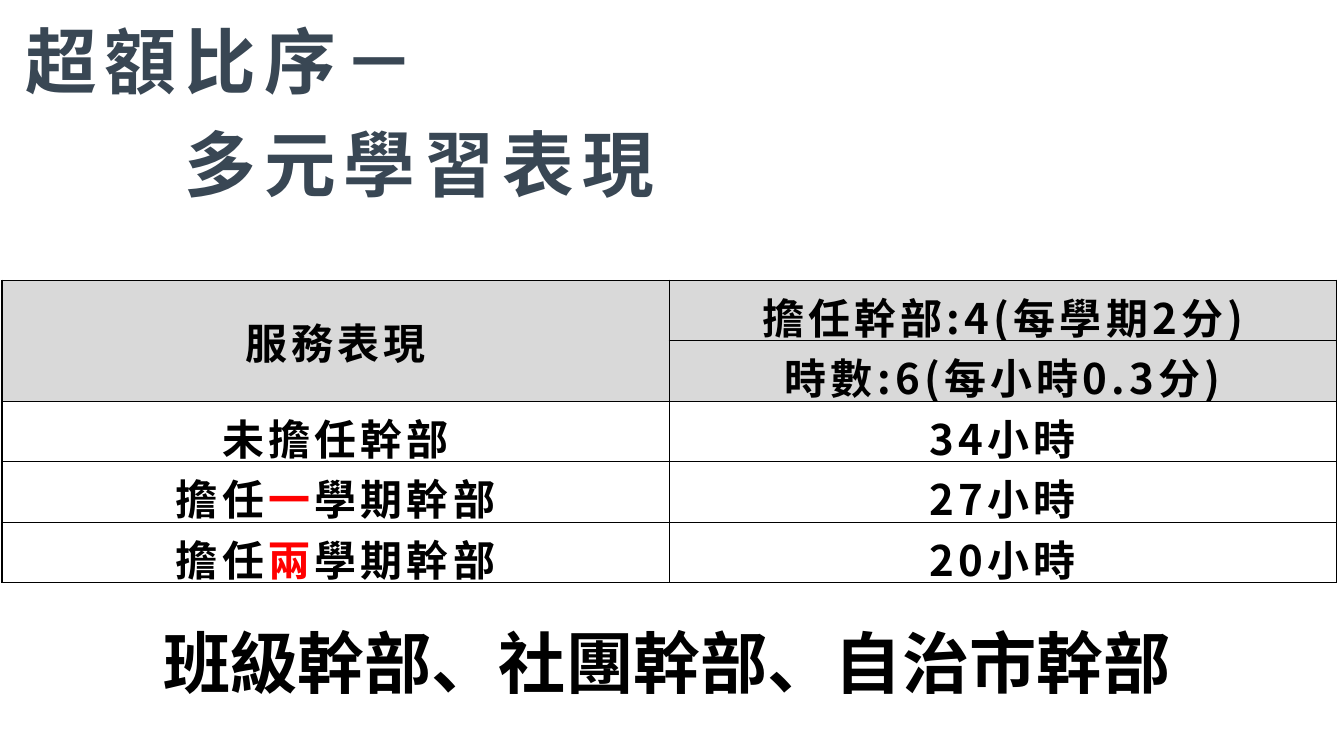
"""Build a slide on service points with a title, a table and a closing line."""
import dataclasses

import lxml.etree
import pptx
import pptx.dml.color
import pptx.enum.text
import pptx.oxml.ns
import pptx.util

Pt = pptx.util.Pt
RGB = pptx.dml.color.RGBColor
qn = pptx.oxml.ns.qn
BLACK = RGB(0, 0, 0)
WHITE = RGB(255, 255, 255)
RED = RGB(255, 0, 0)
GREY = RGB(0xD9, 0xD9, 0xD9)
SLATE = RGB(0x39, 0x47, 0x54)
FACE = "Noto Sans CJK SC"
HEADS = 2


@dataclasses.dataclass(frozen=True)
class Style:
    size: float
    color: RGB
    space: float = 0


@dataclasses.dataclass(frozen=True)
class Row:
    left: tuple[str, ...]
    right: str


TITLE = Style(51.2, SLATE, 5.7)
BODY = Style(30, BLACK, 3)
MARK = Style(30, RED, 3)
CLOSE = Style(48, BLACK)

ROWS = (
    Row(("服務表現",), "擔任幹部:4(每學期2分)"),
    Row((), "時數:6(每小時0.3分)"),
    Row(("未擔任幹部",), "34小時"),
    Row(("擔任", "一", "學期幹部"), "27小時"),
    Row(("擔任", "兩", "學期幹部"), "20小時"),
)


def format_run(run, style: Style) -> None:
    """Set the font, colour and letter spacing of a run."""
    font = run.font
    font.size, font.bold, font.name = Pt(style.size), True, FACE
    font.color.rgb = style.color
    props = run._r.get_or_add_rPr()
    if style.space:
        props.set("spc", str(round(style.space * 100)))
    lxml.etree.SubElement(props, qn("a:ea")).set("typeface", FACE)


def add_text(slide, text: str, style: Style, box: tuple[float, ...], wrap: bool):
    """Add a text box and return its frame."""
    frame = slide.shapes.add_textbox(*map(Pt, box)).text_frame
    frame.word_wrap = wrap
    frame.auto_size = pptx.enum.text.MSO_AUTO_SIZE.SHAPE_TO_FIT_TEXT
    frame.text = text
    for para in frame.paragraphs:
        format_run(para.runs[0], style)
    return frame


def add_title(slide) -> None:
    """Add the title, its second line set in by two letters."""
    frame = add_text(slide, "超額比序－\n多元學習表現", TITLE, (18, 0, 494.6, 149), True)
    frame.margin_left = frame.margin_right = 0
    frame.margin_top = frame.margin_bottom = 0
    for para in frame.paragraphs:
        para.line_spacing = 1.2
    indent = Pt(2 * (TITLE.size + TITLE.space))
    frame.paragraphs[1]._p.get_or_add_pPr().set("marL", str(indent))


def add_lines(cell) -> None:
    """Draw a thin black line on each side of a cell."""
    props = cell._tc.get_or_add_tcPr()
    for index, side in enumerate("LRTB"):
        line = lxml.etree.Element(qn(f"a:ln{side}"), w=str(Pt(1)))
        fill = lxml.etree.SubElement(line, qn("a:solidFill"))
        lxml.etree.SubElement(fill, qn("a:srgbClr")).set("val", str(BLACK))
        props.insert(index, line)


def fill_cell(cell, parts: tuple[str, ...], shade: RGB) -> None:
    """Write the parts of a cell, every second one in red."""
    cell.fill.solid()
    cell.fill.fore_color.rgb = shade
    cell.vertical_anchor = pptx.enum.text.MSO_ANCHOR.MIDDLE
    add_lines(cell)
    para = cell.text_frame.paragraphs[0]
    para.alignment = pptx.enum.text.PP_ALIGN.CENTER
    for index, part in enumerate(parts):
        run = para.add_run()
        run.text = part
        format_run(run, MARK if index % 2 else BODY)


def add_grid(slide) -> None:
    """Add the table of service points."""
    box = map(Pt, (1.4, 200.2, 953.2, 216))
    table = slide.shapes.add_table(len(ROWS), 2, *box).table
    table.first_row = table.horz_banding = False
    for index, row in enumerate(ROWS):
        shade = GREY if index < HEADS else WHITE
        fill_cell(table.cell(index, 0), row.left, shade)
        fill_cell(table.cell(index, 1), (row.right,), shade)
    table.cell(0, 0).merge(table.cell(HEADS - 1, 0))


def main() -> None:
    """Build and save the deck."""
    deck = pptx.Presentation()
    deck.slide_width, deck.slide_height = Pt(960), Pt(540)
    slide = deck.slides.add_slide(deck.slide_layouts[6])
    add_title(slide)
    add_grid(slide)
    add_text(slide, "班級幹部、社團幹部、自治市幹部", CLOSE, (109.4, 440, 741.6, 65.5), False)
    deck.save("out.pptx")


if __name__ == "__main__":
    main()
